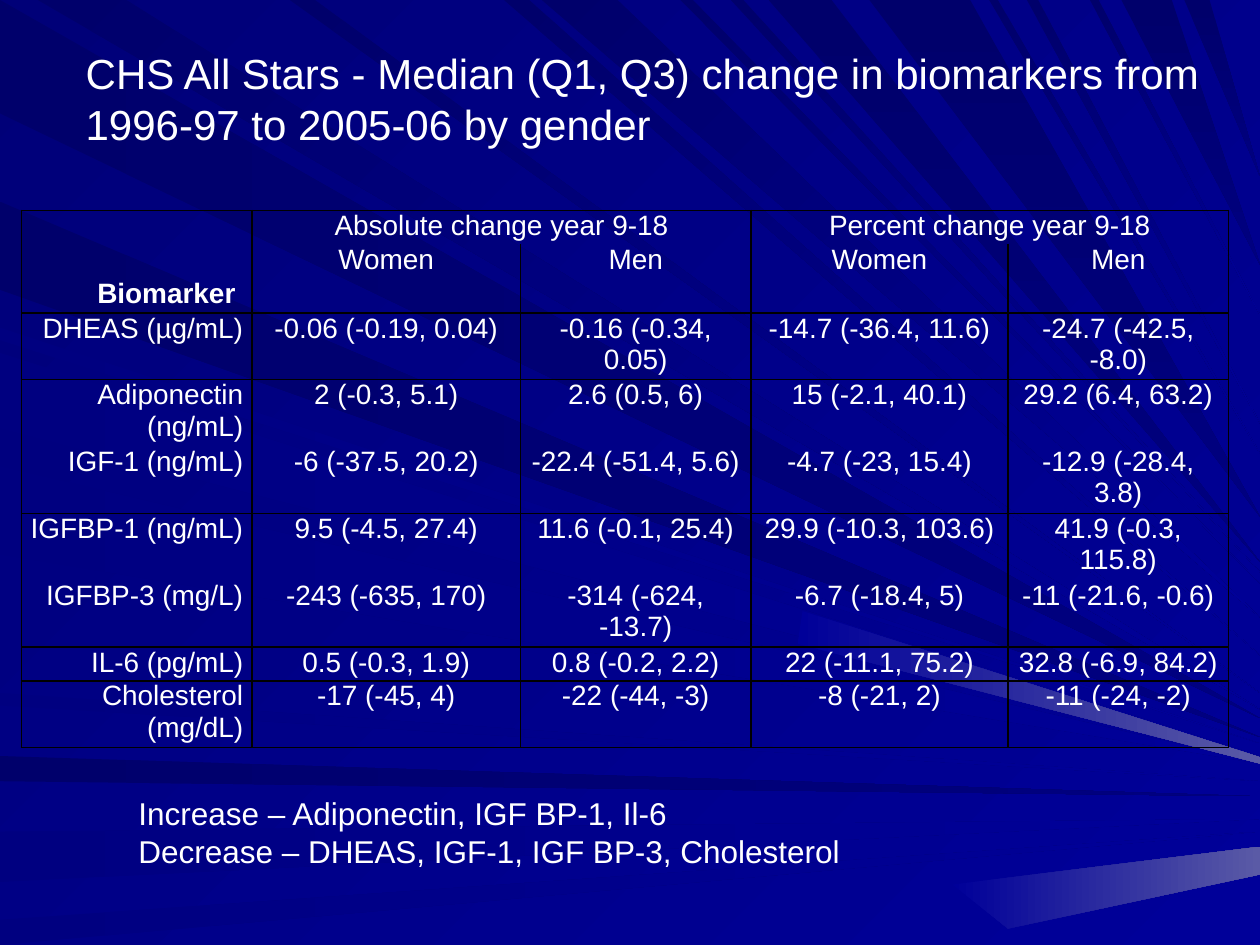
from lxml import etree
from pptx import Presentation
from pptx.dml.color import RGBColor
from pptx.enum.text import MSO_ANCHOR, MSO_AUTO_SIZE, PP_ALIGN
from pptx.oxml.ns import qn
from pptx.util import Inches, Pt

CENTER, LEFT, RIGHT = PP_ALIGN.CENTER, PP_ALIGN.LEFT, PP_ALIGN.RIGHT
TOP = MSO_ANCHOR.TOP
NO_FIT, GROW = MSO_AUTO_SIZE.NONE, MSO_AUTO_SIZE.SHAPE_TO_FIT_TEXT
FONT, WHITE, BLACK = "Arial", "FFFFFF", "000000"
DARK, DEEP, NAVY, BLUE, GLOW = "00006B", "000078", "000080", "000099", "5A5AA6"
SLIDE_WIDTH, SLIDE_HEIGHT = 10, 7.5
CELL_SIZE = 16

TITLE = "CHS All Stars - Median (Q1, Q3) change in biomarkers from 1996-97 to 2005-06 by gender"
SUMMARY = [
    "Increase – Adiponectin, IGF BP-1, Il-6",
    "Decrease – DHEAS, IGF-1, IGF BP-3, Cholesterol",
]
COLUMN_WIDTHS = [1.83, 2.13, 1.83, 2.04, 1.75]
SINGLE_LINE_ROWS = {0, 1, 2, 8}
RULED_ROWS = {2, 3, 5, 7, 8, 9}
ROWS = [
    ["", "Absolute change year 9-18", "", "Percent change year 9-18", ""],
    ["", "Women", "Men", "Women", "Men"],
    ["Biomarker ", "", "", "", ""],
    ["DHEAS (µg/mL)", "-0.06 (-0.19, 0.04)", "-0.16 (-0.34, 0.05)",
     "-14.7 (-36.4, 11.6)", "-24.7 (-42.5, -8.0)"],
    ["Adiponectin (ng/mL)", "2 (-0.3, 5.1)", "2.6 (0.5, 6)", "15 (-2.1, 40.1)", "29.2 (6.4, 63.2)"],
    ["IGF-1 (ng/mL)", "-6 (-37.5, 20.2)", "-22.4 (-51.4, 5.6)", "-4.7 (-23, 15.4)", "-12.9 (-28.4, 3.8)"],
    ["IGFBP-1 (ng/mL)", "9.5 (-4.5, 27.4)", "11.6 (-0.1, 25.4)",
     "29.9 (-10.3, 103.6)", "41.9 (-0.3, 115.8)"],
    ["IGFBP-3 (mg/L)", "-243 (-635, 170)", "-314 (-624, -13.7)", "-6.7 (-18.4, 5)", "-11 (-21.6, -0.6)"],
    ["IL-6 (pg/mL)", "0.5 (-0.3, 1.9)", "0.8 (-0.2, 2.2)", "22 (-11.1, 75.2)", "32.8 (-6.9, 84.2)"],
    ["Cholesterol (mg/dL)", "-17 (-45, 4)", "-22 (-44, -3)", "-8 (-21, 2)", "-11 (-24, -2)"],
]
LEFT_DARK_RAYS = [(0, 0.9, 5.7), (1.6, 2.3, 5.85), (6, 6.2, 6.32)]
LEFT_RAYS = [(2.6, 2.7, 5.9), (2.8, 3.4, 6), (3.7, 4.4, 6.06), (5.5, 5.6, 6.2), (6.6, 7, 6.5), (7.3, 7.5, 6.6)]
TOP_RAYS = [(0.3, 1, 5.63), (2.3, 2.5, 5.5), (4, 4.2, 5.2), (4.3, 4.9, 4.9), (5.4, 5.5, 4.63),
            (5.8, 5.9, 4.54), (7.85, 7.92, 3.6), (8.15, 8.24, 3.36), (8.65, 8.72, 2.5)]
TOP_DARK_RAYS = [(6.1, 6.6, 4.46), (6.9, 7.7, 4.1), (8.9, 9.3, 2.1), (9.4, 9.6, 1.4)]
GLOWING_TIP = [(6.33, 5.11), (6.37, 4.85), (10, 6.01), (10, 6.06)]
LOWER_BEAM = [(7.56, 7.02), (10, 6.72), (10, 6.94), (8, 7.37)]


def rgb(value):
    """Return the colour for a hex string."""
    return RGBColor.from_string(value)


def paint(fill, start, end, angle):
    """Fill with a gradient at a clockwise angle."""
    fill.gradient()
    fill.gradient_angle = -angle % 360
    for stop, value in zip(fill.gradient_stops, (start, end)):
        stop.color.rgb = rgb(value)


def add_ray(s, points, start, end, angle):
    """Draw one background ray as a closed outline."""
    corners = [(Inches(x), Inches(y)) for x, y in points]
    builder = s.shapes.build_freeform(*corners[0], scale=1.0)
    builder.add_line_segments(corners[1:], close=True)
    sp = builder.convert_to_shape()
    sp.shadow.inherit = False
    sp.line.fill.background()
    paint(sp.fill, start, end, angle)


def add_rays(s):
    """Draw the rays that narrow from the left and top edges to the right edge."""
    for rays, start, end in ((LEFT_DARK_RAYS, DARK, NAVY), (LEFT_RAYS, NAVY, BLUE)):
        for a, b, tip in rays:
            add_ray(s, [(0, a), (0, b), (SLIDE_WIDTH, tip)], start, end, 0)
    for rays, end, angle in ((TOP_RAYS, BLUE, 45), (TOP_DARK_RAYS, NAVY, 90)):
        for a, b, tip in rays:
            add_ray(s, [(a, 0), (b, 0), (SLIDE_WIDTH, tip)], DARK, end, angle)
    for points in (GLOWING_TIP, LOWER_BEAM):
        add_ray(s, points, BLUE, GLOW, 0)


def add_run(p, text, size, bold=False):
    """Add a white run to a paragraph."""
    r = p.add_run()
    r.text = text
    r.font.name, r.font.size, r.font.bold = FONT, Pt(size), bold
    r.font.color.rgb = rgb(WHITE)


def set_title(s, text):
    """Place the title in front of the rays and fill it."""
    sp = s.shapes.title
    s.shapes._spTree.append(sp._element)
    sp.left, sp.top, sp.width, sp.height = map(Inches, (0.58, 0.33, 9.17, 0.91))
    tf = sp.text_frame
    tf.word_wrap, tf.auto_size, tf.vertical_anchor = True, NO_FIT, TOP
    tf.paragraphs[0].alignment = LEFT
    add_run(tf.paragraphs[0], text, 24)


def set_borders(cell, row):
    """Rule the sides of a cell, and its top and bottom where the row is ruled."""
    tcPr = cell._tc.get_or_add_tcPr()
    ruled = {"L": True, "R": True, "T": row == 0 or row - 1 in RULED_ROWS, "B": row in RULED_ROWS}
    for side, shown in ruled.items():
        ln = etree.SubElement(tcPr, qn(f"a:ln{side}"), w=str(Pt(1)))
        if shown:
            fill = etree.SubElement(ln, qn("a:solidFill"))
            etree.SubElement(fill, qn("a:srgbClr"), val=BLACK)
        else:
            etree.SubElement(ln, qn("a:noFill"))


def format_cell(cell, text, row, col):
    """Write and style one table cell."""
    set_borders(cell, row)
    cell.fill.background()
    cell.margin_left = cell.margin_right = Inches(0.07)
    cell.margin_top = cell.margin_bottom = 0
    p = cell.text_frame.paragraphs[0]
    p.alignment = CENTER if col else RIGHT
    if text:
        add_run(p, text, CELL_SIZE, bold=row == 2)
    else:
        etree.SubElement(p._p, qn("a:endParaRPr"), sz=str(CELL_SIZE * 100))


def add_biomarker_table(s):
    """Add the table of changes by biomarker and gender."""
    frame = s.shapes.add_table(len(ROWS), len(COLUMN_WIDTHS), Inches(0.17), Inches(1.67),
                               Inches(sum(COLUMN_WIDTHS)), Inches(4.27))
    table = frame.table
    table.first_row = table.horz_banding = False
    for column, width in zip(table.columns, COLUMN_WIDTHS):
        column.width = Inches(width)
    for i, texts in enumerate(ROWS):
        table.rows[i].height = Inches(0.27 if i in SINGLE_LINE_ROWS else 0.53)
        for j, text in enumerate(texts):
            format_cell(table.cell(i, j), text, i, j)
    table.cell(0, 0).merge(table.cell(1, 0))
    for j in (1, 3):
        table.cell(0, j).merge(table.cell(0, j + 1))


def add_summary(s, lines):
    """Add the text box below the table, one paragraph a line."""
    tf = s.shapes.add_textbox(Inches(1), Inches(6.25), Inches(7.5), Inches(0.71)).text_frame
    tf.word_wrap, tf.auto_size = True, GROW
    for i, line in enumerate(lines):
        add_run(tf.add_paragraph() if i else tf.paragraphs[0], line, 18)


def main():
    """Build the slide and save it."""
    prs = Presentation()
    prs.slide_width, prs.slide_height = Inches(SLIDE_WIDTH), Inches(SLIDE_HEIGHT)
    s = prs.slides.add_slide(prs.slide_layouts[5])
    paint(s.background.fill, DEEP, BLUE, 45)
    add_rays(s)
    set_title(s, TITLE)
    add_biomarker_table(s)
    add_summary(s, SUMMARY)
    prs.save("out.pptx")


if __name__ == "__main__":
    main()
